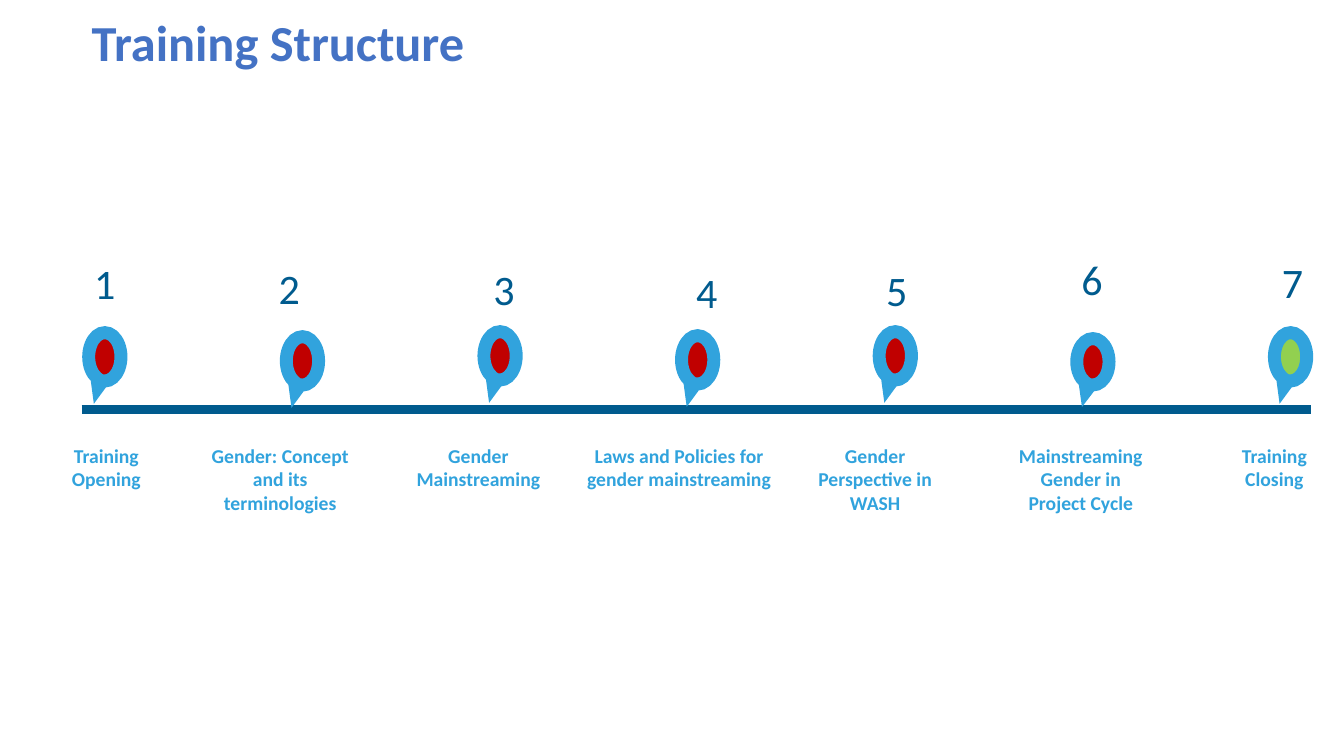
from dataclasses import dataclass
from lxml.etree import SubElement
from pptx import Presentation
from pptx.dml.color import RGBColor
from pptx.enum.shapes import MSO_CONNECTOR, MSO_SHAPE
from pptx.enum.text import MSO_ANCHOR, MSO_AUTO_SIZE, PP_ALIGN
from pptx.oxml.ns import qn
from pptx.util import Pt

PX = 9144


@dataclass(frozen=True)
class Theme:
    font: str = "Calibri"
    title: str = "4472C4"
    navy: str = "005B8E"
    sky: str = "31A3DD"
    red: str = "C00000"
    green: str = "92D050"
    title_size: int = 36
    number_size: int = 30
    label_size: int = 14
    rail_width: float = 6.75
    pin_width: float = 9.25


THEME = Theme()
PIN_LEFT, PIN_STEP, PIN_WIDTH = 88, 196, 32
LABEL_TOP = 425

STAGES = [
    ("Training Opening", (59, 93, 128), (63, 256, 82, 66), (330, 48)),
    ("Gender: Concept and its terminologies", (191, 174, 120), (259, 259, 56, 68), (334, 48)),
    ("Gender Mainstreaming", (405, 139, 114), (465, 261, 70, 66), (329, 48)),
    ("Laws and Policies for gender mainstreaming", (576, 195, 114), (668, 264, 66, 66), (333, 48)),
    ("Gender Perspective in WASH", (795, 146, 114), (854, 262, 71, 66), (329, 48)),
    ("Mainstreaming Gender in Project Cycle", (999, 146, 114), (1034, 247, 98, 75), (336, 46)),
    ("Training\nClosing", (1191, 146, 114), (1241, 255, 82, 66), (330, 48)),
]


def px(*lengths):
    return [length * PX for length in lengths]


def assign(target, values):
    for name, value in values.items():
        setattr(target, name, value)


def write(shape, text, size, color, bold, frame_format, para_format):
    frame = shape.text_frame
    frame.text = text
    assign(frame, {"word_wrap": True, "auto_size": MSO_AUTO_SIZE.NONE, **frame_format})
    for para in frame.paragraphs:
        assign(para, para_format)
        assign(para.font, {"name": THEME.font, "size": Pt(size), "bold": bold})
        para.font.color.rgb = RGBColor.from_string(color)


def add_title(page, text):
    title = page.shapes.title
    assign(title, dict(zip(("left", "top", "width", "height"), px(81, 4, 1207, 82))))
    write(title, text, THEME.title_size, THEME.title, True,
          {"vertical_anchor": MSO_ANCHOR.MIDDLE},
          {"alignment": PP_ALIGN.LEFT, "line_spacing": 0.9})


def add_text(page, bounds, text, size, color, bold, anchor, margins):
    box = page.shapes.add_textbox(*px(*bounds))
    sides = ("margin_left", "margin_top", "margin_right", "margin_bottom")
    write(box, text, size, color, bold,
          {"vertical_anchor": anchor, **dict(zip(sides, px(*margins)))},
          {"alignment": PP_ALIGN.CENTER})


def add_rail(page):
    rail = page.shapes.add_connector(MSO_CONNECTOR.STRAIGHT, *px(81, 406, 1300, 406))
    rail.line.color.rgb = RGBColor.from_string(THEME.navy)
    rail.line.width = Pt(THEME.rail_width)
    SubElement(rail._element.spPr, qn("a:effectLst"))


def add_pin(page, left, top, height, color):
    pin = page.shapes.add_shape(
        MSO_SHAPE.OVAL_CALLOUT, *px(left, top, PIN_WIDTH, height))
    pin.adjustments[0] = -0.208
    pin.adjustments[1] = 0.625
    pin.shadow.inherit = False
    pin.fill.solid()
    pin.fill.fore_color.rgb = RGBColor.from_string(color)
    pin.line.color.rgb = RGBColor.from_string(THEME.sky)
    pin.line.width = Pt(THEME.pin_width)
    SubElement(pin.line._get_or_add_ln(), qn("a:miter"), lim="800000")


def add_stage(page, index, stage):
    text, (left, width, height), number_bounds, (pin_top, pin_height) = stage
    add_text(page, number_bounds, str(index + 1), THEME.number_size, THEME.navy,
             False, MSO_ANCHOR.MIDDLE, (0, 0, 0, 16))
    add_text(page, (left, LABEL_TOP, width, height), text, THEME.label_size,
             THEME.sky, True, MSO_ANCHOR.TOP, (3, 15, 3, 0))
    color = THEME.green if index == len(STAGES) - 1 else THEME.red
    add_pin(page, PIN_LEFT + index * PIN_STEP, pin_top, pin_height, color)


def main():
    deck = Presentation()
    deck.slide_width, deck.slide_height = px(1333, 750)
    page = deck.slides.add_slide(deck.slide_layouts[5])
    add_title(page, "Training Structure")
    add_rail(page)
    for index, stage in enumerate(STAGES):
        add_stage(page, index, stage)
    deck.save("out.pptx")


if __name__ == "__main__":
    main()
